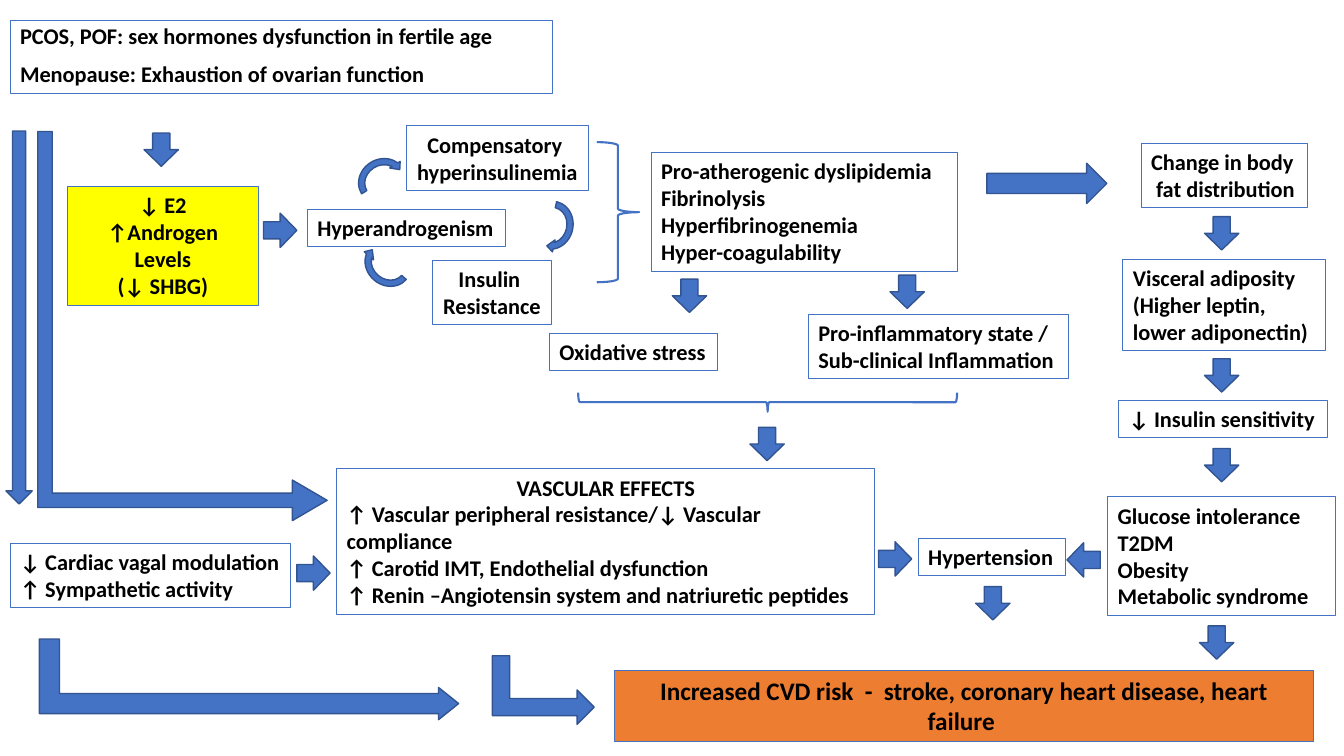
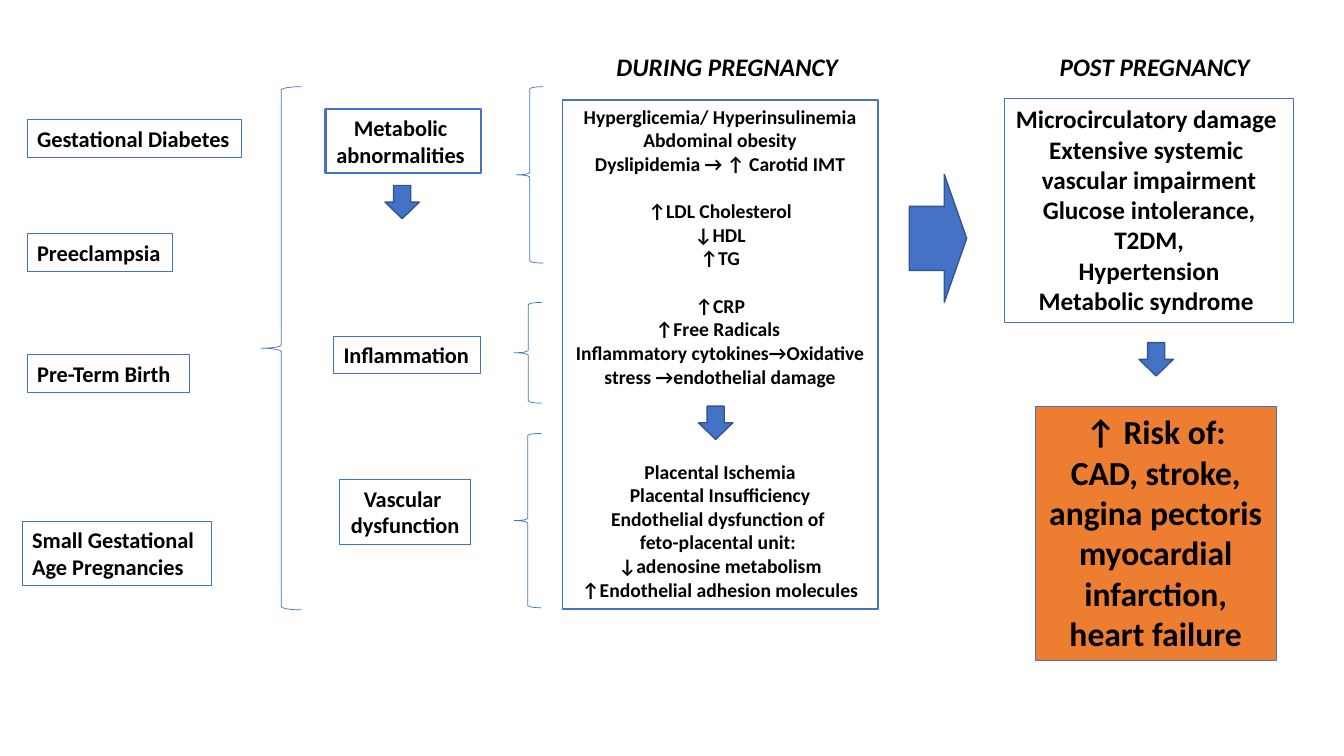
from dataclasses import dataclass, field

from pptx import Presentation
from pptx import util as u
from pptx.dml.color import RGBColor
from pptx.enum import shapes, text

# Shared look
HEX = {"blue": "4472C4", "edge": "325491", "orange": "ED7D31",
       "yellow": "FFFF00", "ink": "000000"}
FONT = {"name": "Calibri", "bold": True}
FRAME = {"vertical_anchor": text.MSO_ANCHOR.TOP,
         "auto_size": text.MSO_AUTO_SIZE.SHAPE_TO_FIT_TEXT}
MSO = shapes.MSO_SHAPE
LEFT, CENTER = text.PP_ALIGN.LEFT, text.PP_ALIGN.CENTER

# Square grid: ten columns or rows to the inch
CELL = u.Inches(0.1)
COLS, ROWS = 133.33, 75
ARROW_W, ARROW_H = 3.4, 3.3


@dataclass
class Box:
    at: tuple[float, float, float, float]
    lines: list[str]
    align: text.PP_ALIGN = LEFT
    size: int = 16
    wrap: bool = False
    fill: str = ""
    line_pt: float = 0.75
    heading: bool = False  # first line centred
    italic: bool = False
    spacing: float = 1.0
    gaps: dict[int, float] = field(default_factory=dict)  # line index: points


@dataclass
class Arrow:
    at: tuple[float, float, float, float]
    kind: MSO = MSO.DOWN_ARROW
    rot: float = 0
    adj: tuple[float, ...] = ()


@dataclass
class Brace:
    at: tuple[float, float, float, float]
    kind: MSO = MSO.LEFT_BRACE
    line_pt: float = 0.5
    rot: float = 0


def rgb(name: str) -> RGBColor:
    return RGBColor.from_string(HEX[name])


def grid(at: tuple[float, ...]) -> list[int]:
    return [round(n * CELL) for n in at]


def set_all(target, values: dict) -> None:
    for key, value in values.items():
        setattr(target, key, value)


def add_outline(s, kind: MSO, at: tuple, fill: str, line: str, line_pt: float):
    sp = s.shapes.add_shape(kind, *grid(at))
    sp.shadow.inherit = False
    if fill:
        sp.fill.solid()
        sp.fill.fore_color.rgb = rgb(fill)
    else:
        sp.fill.background()
    sp.line.color.rgb = rgb(line)
    sp.line.width = u.Pt(line_pt)
    return sp


def add_box(s, box: Box) -> None:
    if box.line_pt:
        sp = add_outline(s, MSO.RECTANGLE, box.at, box.fill, "blue", box.line_pt)
    else:
        sp = s.shapes.add_textbox(*grid(box.at))
    tf = sp.text_frame
    set_all(tf, FRAME | {"word_wrap": box.wrap})
    for i, line in enumerate(box.lines):
        p = tf.add_paragraph() if i else tf.paragraphs[0]
        centred = box.heading and i == 0
        set_all(p, {"alignment": CENTER if centred else box.align,
                    "line_spacing": box.spacing,
                    "space_before": u.Pt(box.gaps.get(i, 0))})
        r = p.add_run()
        r.text = line
        set_all(r.font, FONT | {"size": u.Pt(box.size), "italic": box.italic})
        r.font.color.rgb = rgb("ink")


def add_arrow(s, arrow: Arrow) -> None:
    sp = add_outline(s, arrow.kind, arrow.at, "blue", "edge", 1)
    sp.rotation = arrow.rot
    for i, value in enumerate(arrow.adj):
        sp.adjustments[i] = value


def add_brace(s, brace: Brace) -> None:
    sp = add_outline(s, brace.kind, brace.at, "", "blue", brace.line_pt)
    sp.rotation = brace.rot


def small_arrow(x: float, y: float, rot: float = 0) -> Arrow:
    return Arrow((x, y, ARROW_W, ARROW_H), rot=rot)


def cycle_arrow(x: float, y: float, rot: float) -> Arrow:
    return Arrow((x, y, 5.4, 4.9), MSO.CIRCULAR_ARROW, rot)


def elbow(at: tuple, *adj: float) -> Arrow:
    return Arrow(at, MSO.BENT_UP_ARROW, 90, adj)


# Slide 1: from hormone loss to cardiovascular risk
RISK_BOXES = [
    Box((1, 2, 53.8, 7.3),
        ["PCOS, POF: sex hormones dysfunction in fertile age",
         "Menopause: Exhaustion of ovarian function"],
        wrap=True, spacing=0.9, gaps={1: 10}),
    Box((61, 66.5, 69.3, 7.1),
        ["Increased CVD risk  -  stroke, coronary heart disease, heart failure "],
        CENTER, 18, True, "orange"),
    Box((54.5, 33.1, 16.7, 3.7), ["Oxidative stress"]),
    Box((80.2, 31.2, 25.8, 6.4),
        ["Pro-inflammatory state /", "Sub-clinical Inflammation"]),
    Box((33.4, 46.5, 53.4, 14.5),
        ["VASCULAR EFFECTS",
         "↑ Vascular peripheral resistance/↓ Vascular compliance",
         "↑ Carotid IMT, Endothelial dysfunction",
         "↑ Renin –Angiotensin system and natriuretic peptides"],
        wrap=True, heading=True),
    Box((91.1, 53.4, 14.6, 3.7), ["Hypertension"]),
    Box((1, 53.9, 27.8, 6.4),
        ["↓ Cardiac vagal modulation", "↑ Sympathetic activity"], wrap=True),
    Box((6.7, 18.5, 18.9, 11.8), ["↓ E2", "↑Androgen Levels", "(↓ SHBG)"],
        CENTER, wrap=True, fill="yellow"),
    Box((30.5, 20.8, 19.7, 3.7), ["Hyperandrogenism"]),
    Box((40.3, 12.5, 18.1, 6.4), ["Compensatory ", "hyperinsulinemia"], CENTER),
    Box((42.9, 25.8, 11.8, 6.4), ["Insulin ", "Resistance"], CENTER),
    Box((64.6, 15.1, 30.4, 11.8),
        ["Pro-atherogenic dyslipidemia", "Fibrinolysis",
         "Hyperfibrinogenemia", "Hyper-coagulability"], wrap=True),
    # metabolic column on the right
    Box((113.2, 14.2, 16.5, 6.4), ["Change in body", " fat distribution"]),
    Box((111.4, 25.7, 20.1, 9.1),
        ["Visceral adiposity", "(Higher leptin,", "lower adiponectin)"]),
    Box((111, 39.7, 20.7, 3.7), ["↓ Insulin sensitivity"]),
    Box((109.9, 49.3, 22.6, 11.8),
        ["Glucose intolerance", "T2DM", "Obesity", "Metabolic syndrome"],
        wrap=True),
]
DOWN = [(14.3, 13.2), (66.7, 27.7), (88.3, 27.3), (74.4, 42.4),
        (96.8, 58.2), (119, 62.1)] + [(119.5, y) for y in (21.5, 35.6, 44.5)]
RIGHT = [(26.1, 21.2), (29.4, 55.2), (87.1, 53.8)]
RISK_ARROWS = [
    *(small_arrow(x, y) for x, y in DOWN),
    *(small_arrow(x, y, 270) for x, y in RIGHT),
    small_arrow(105.8, 53.9, 90),
    cycle_arrow(35.2, 15.5, 327.6),
    cycle_arrow(35.8, 23.7, 221.1),
    cycle_arrow(52, 19.9, 102.5),
    Arrow((97.9, 16.2, 11.9, 4), MSO.RIGHT_ARROW),
    Arrow((0.6, 13, 2.6, 37)),
    elbow((-1.2, 18, 38.6, 28.7), 0.05, 0.07, 0.12),
    elbow((20.7, 46.6, 8, 41.6), 0.25, 0.2, 0.25),
    elbow((50.5, 63.4, 6.8, 10.1)),
]
RISK_BRACES = [
    Brace((59.2, 14.1, 4.2, 13.9), MSO.RIGHT_BRACE, 1.5),
    Brace((75.2, 21.1, 1.9, 37.6), MSO.RIGHT_BRACE, 1.5, 90),
]

# Slide 2: pregnancy complications and later risk
BLANK = 17.1  # height of one 14 pt line
PREGNANCY_BOXES = [
    # complications
    Box((2.7, 11.9, 21.3, 3.7), ["Gestational Diabetes"]),
    Box((2.7, 23.2, 14.4, 3.7), ["Preeclampsia"]),
    Box((2.7, 35.2, 16.1, 3.7), ["Pre-Term Birth"]),
    Box((2.2, 51.7, 18.8, 6.4), ["Small Gestational", "Age Pregnancies"]),
    # mechanisms
    Box((32.3, 10.8, 15.4, 6.4), ["Metabolic ", "abnormalities "], CENTER,
        line_pt=1.5),
    Box((33.1, 33.4, 14.6, 3.7), ["Inflammation"]),
    Box((33.7, 47.6, 13, 6.4), ["Vascular ", "dysfunction"], CENTER),
    # during pregnancy
    Box((60, 4.6, 24.3, 4), ["DURING PREGNANCY"], CENTER, 18, line_pt=0,
        italic=True),
    Box((55.8, 9.9, 31.3, 50.5),
        ["Hyperglicemia/ Hyperinsulinemia", "Abdominal obesity",
         "Dyslipidemia → ↑ Carotid IMT",
         "↑LDL Cholesterol", "↓HDL", " ↑TG ",
         "↑CRP", "↑Free Radicals ",
         "Inflammatory cytokines→Oxidative stress →endothelial damage",
         "Placental Ischemia", "Placental Insufficiency",
         "Endothelial dysfunction of ", "feto-placental unit: ",
         "↓adenosine metabolism", "↑Endothelial adhesion molecules"],
        CENTER, 14, True, line_pt=1,
        gaps={3: BLANK, 6: BLANK, 9: 3 * BLANK}),
    # post pregnancy
    Box((104, 4.6, 21.1, 4), ["POST PREGNANCY"], CENTER, 18, line_pt=0,
        italic=True),
    Box((99.7, 9.8, 28.6, 22.2),
        ["Microcirculatory damage ", "Extensive systemic ",
         "vascular impairment", "Glucose intolerance,", "T2DM,",
         "Hypertension", "Metabolic syndrome "], CENTER, 18),
    Box((102.7, 40.3, 23.9, 25.2),
        ["↑ Risk of:", "CAD, stroke,", "angina pectoris",
         "myocardial infarction, heart failure"],
        CENTER, 24, True, "orange"),
]
PREGNANCY_ARROWS = [
    *(small_arrow(x, y) for x, y in [(113, 34), (38.2, 18.4), (69.3, 40.3)]),
    Arrow((86.7, 20.8, 12.7, 5.7), rot=270, adj=(0.5, 0.39)),
]
PREGNANCY_BRACES = [Brace(at) for at in [
    (25.9, 8.6, 4, 51.9), (51.2, 8.6, 2.7, 17.5),
    (51, 30, 2.8, 10), (51, 43, 2.7, 17.3)]]


def main() -> None:
    prs = Presentation()
    prs.slide_width, prs.slide_height = grid((COLS, ROWS))
    for boxes, arrows, braces in [
            (RISK_BOXES, RISK_ARROWS, RISK_BRACES),
            (PREGNANCY_BOXES, PREGNANCY_ARROWS, PREGNANCY_BRACES)]:
        s = prs.slides.add_slide(prs.slide_layouts[6])
        for draw, items in [(add_box, boxes), (add_arrow, arrows),
                            (add_brace, braces)]:
            for item in items:
                draw(s, item)
    prs.save("out.pptx")


if __name__ == "__main__":
    main()
